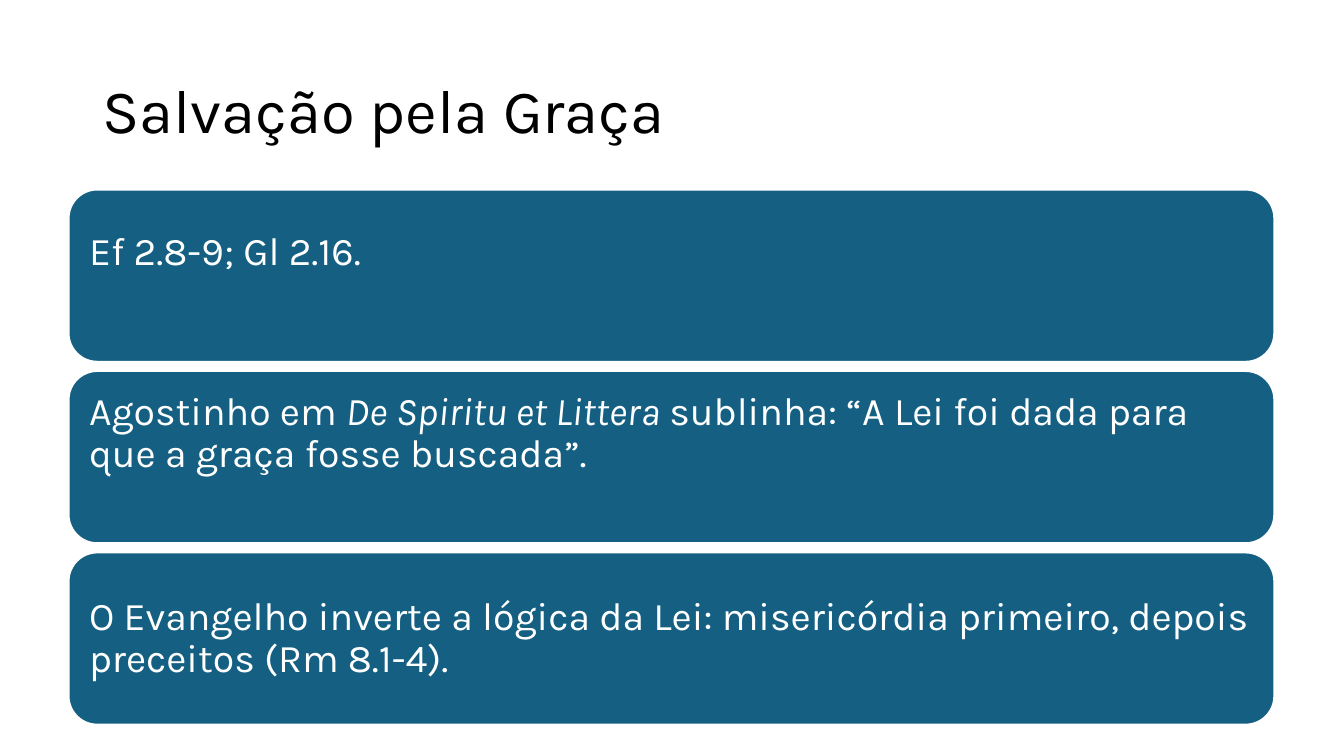
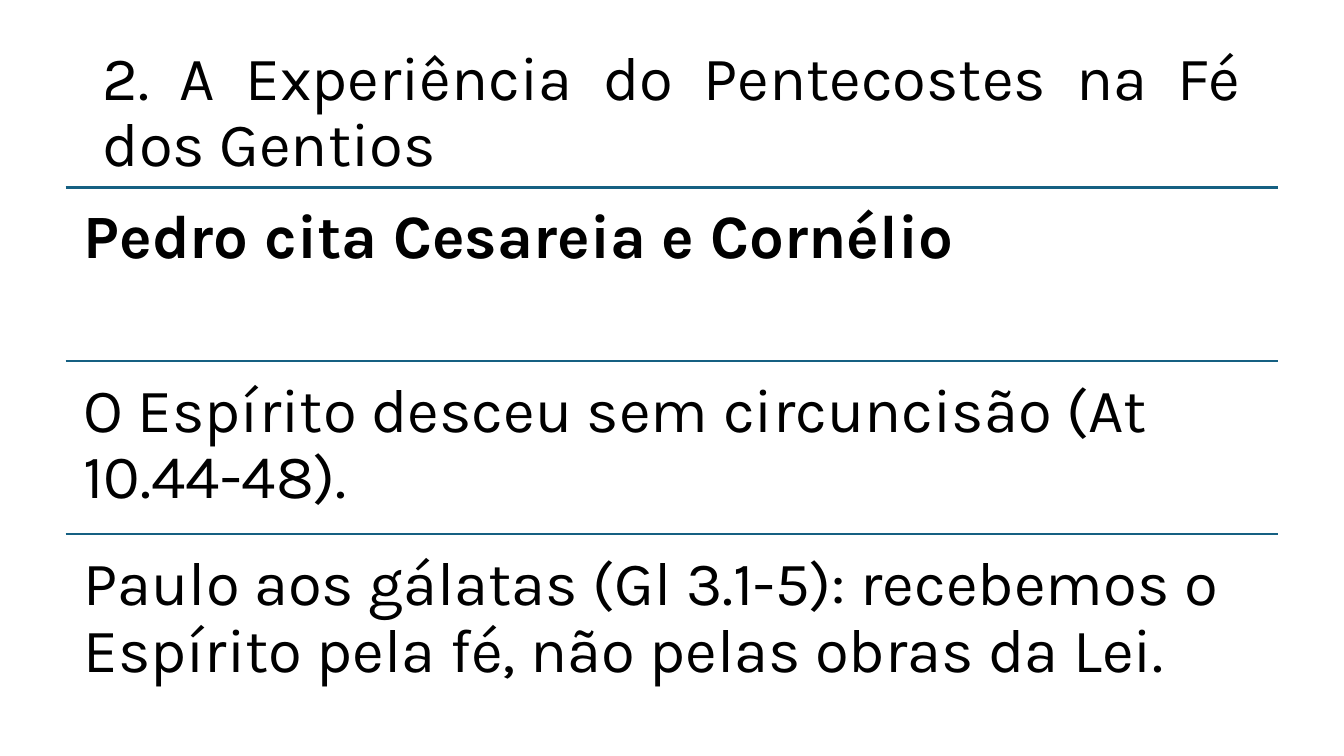
from lxml.etree import SubElement
from pptx import Presentation
from pptx.dml.color import RGBColor
from pptx.enum.shapes import MSO_CONNECTOR, MSO_SHAPE
from pptx.enum.text import MSO_ANCHOR, PP_ALIGN
from pptx.oxml.ns import qn
from pptx.util import Pt

PX = 9144  # EMU in one px, 100 px to the inch
FONT = "Karla"
COLORS = {"paper": "FFFFFF", "ink": "000000", "blue": "156082"}
TITLE_SIZE, CARD_SIZE, ROW_SIZE = 44, 28, 44

GRACE_TITLE = "Salvação pela Graça"
# Each card: its runs as (text, style), and the px its text is raised by.
GRACE_CARDS = [
    ([("Ef 2.8-9; Gl 2.16.", "")], 23),
    ([("Agostinho em ", ""),
      ("De Spiritu et Littera", "italic"),
      (" sublinha: “A Lei foi dada para que a graça fosse buscada”.", "")], 23),
    ([("O Evangelho inverte a lógica da Lei: misericórdia primeiro, "
       "depois preceitos (Rm 8.1-4).", "")], 0),
]

PENTECOST_TITLE = "2. A Experiência do Pentecostes na Fé dos Gentios"
PENTECOST_ROWS = [
    [("Pedro cita Cesareia e Cornélio", "bold")],
    [("O Espírito desceu sem circuncisão (At 10.44-48).", "")],
    [("Paulo aos gálatas (Gl 3.1-5): recebemos o Espírito pela fé, "
      "não pelas obras da Lei.", "")],
]

TITLE_BOX = (92, 40, 1150, 145)
CARD_LEFT, CARD_TOP, CARD_WIDTH, CARD_HEIGHT, CARD_GAP = 68, 188, 1196, 171, 9
ROW_LEFT, ROW_TOP, ROW_WIDTH, ROW_HEIGHT = 65, 186, 1203, 172


def px(*lengths):
    return [length * PX for length in lengths]


def color(name):
    return RGBColor.from_string(COLORS[name])


def write(shape, runs, size, ink, anchor, insets, align=PP_ALIGN.LEFT):
    """Fill a shape with one paragraph; insets are left, top, right, bottom."""
    frame = shape.text_frame
    frame.word_wrap = True
    frame.vertical_anchor = anchor
    (frame.margin_left, frame.margin_top,
     frame.margin_right, frame.margin_bottom) = px(*insets)
    paragraph = frame.paragraphs[0]
    paragraph.alignment = align
    paragraph.line_spacing = 0.9
    for text, style in runs:
        run = paragraph.add_run()
        run.text = text
        run.font.name = FONT
        run.font.size = Pt(size)
        run.font.bold = style == "bold"
        run.font.italic = style == "italic"
        run.font.color.rgb = color(ink)


def add_titled_slide(deck, title, align=PP_ALIGN.LEFT):
    slide = deck.slides.add_slide(deck.slide_layouts[6])
    slide.background.fill.solid()
    slide.background.fill.fore_color.rgb = color("paper")
    write(slide.shapes.add_textbox(*px(*TITLE_BOX)), [(title, "")],
          TITLE_SIZE, "ink", MSO_ANCHOR.MIDDLE, (10, 5, 10, 5), align)
    return slide


def add_card(slide, index, runs, rise):
    top = CARD_TOP + index * (CARD_HEIGHT + CARD_GAP)
    card = slide.shapes.add_shape(
        MSO_SHAPE.ROUNDED_RECTANGLE, *px(CARD_LEFT, top, CARD_WIDTH, CARD_HEIGHT))
    card.shadow.inherit = False
    card.fill.solid()
    card.fill.fore_color.rgb = color("blue")
    card.line.color.rgb = color("paper")
    card.line.width = Pt(1.5)
    write(card, runs, CARD_SIZE, "paper", MSO_ANCHOR.MIDDLE,
          (12, 12, 12, 12 + 2 * rise))


def add_ruled_row(slide, index, runs):
    top = ROW_TOP + index * ROW_HEIGHT
    rule = slide.shapes.add_connector(
        MSO_CONNECTOR.STRAIGHT, *px(ROW_LEFT, top, ROW_LEFT + ROW_WIDTH, top))
    rule.line.color.rgb = color("blue")
    rule.line.width = Pt(1.5)
    SubElement(rule._element.spPr, qn("a:effectLst"))
    row = slide.shapes.add_textbox(*px(ROW_LEFT, top, ROW_WIDTH, ROW_HEIGHT))
    write(row, runs, ROW_SIZE, "ink", MSO_ANCHOR.TOP, (18, 18, 18, 18))


def main():
    deck = Presentation()
    deck.slide_width, deck.slide_height = px(1333, 750)

    grace = add_titled_slide(deck, GRACE_TITLE)
    for index, (runs, rise) in enumerate(GRACE_CARDS):
        add_card(grace, index, runs, rise)

    pentecost = add_titled_slide(deck, PENTECOST_TITLE, PP_ALIGN.JUSTIFY)
    for index, runs in enumerate(PENTECOST_ROWS):
        add_ruled_row(pentecost, index, runs)

    deck.save("out.pptx")


if __name__ == "__main__":
    main()
